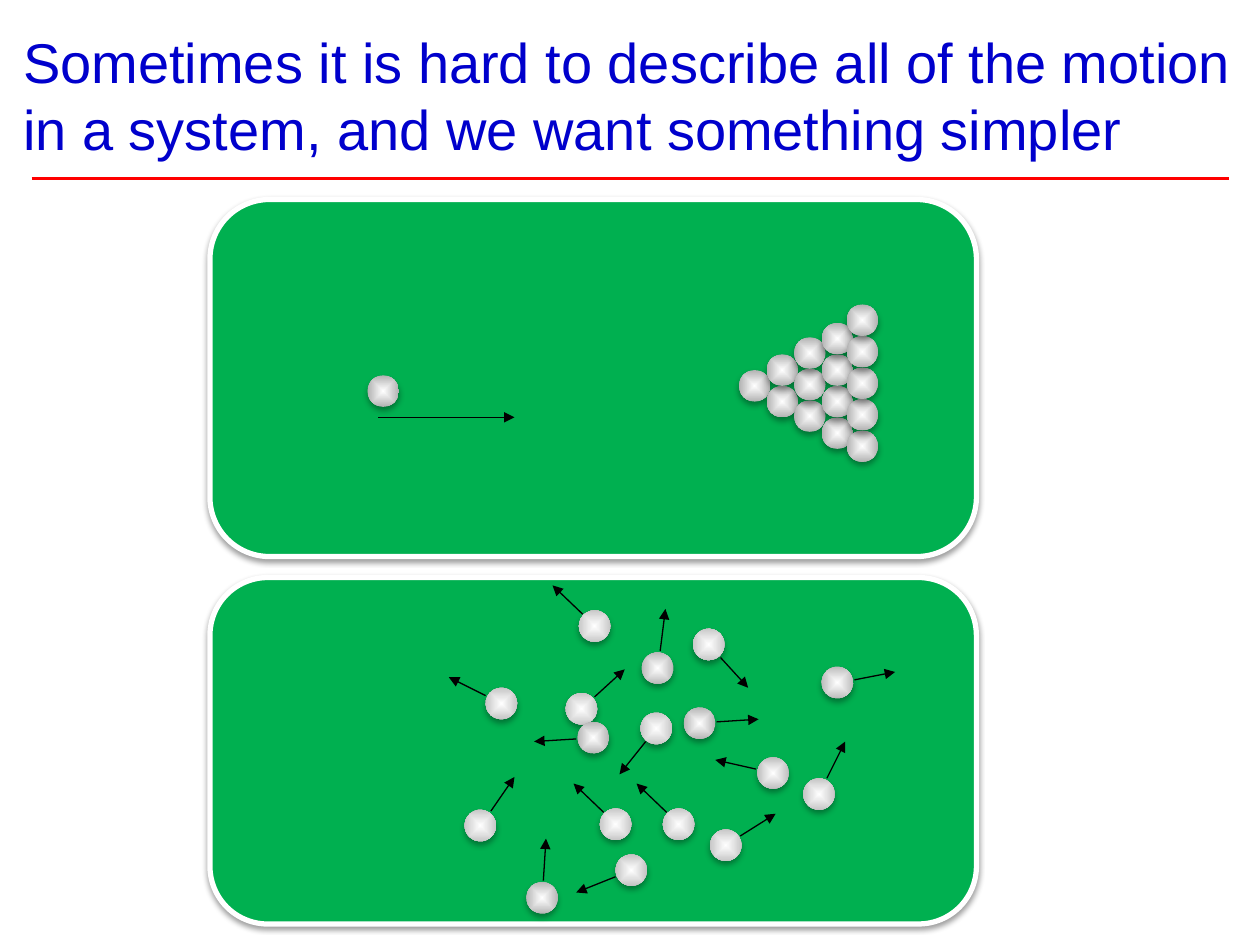
from dataclasses import dataclass
from math import cos, radians, sin
from typing import Any

from lxml.etree import SubElement
from pptx import Presentation
from pptx.dml.color import RGBColor
from pptx.enum.shapes import MSO_CONNECTOR, MSO_SHAPE
from pptx.enum.text import MSO_ANCHOR, MSO_AUTO_SIZE, PP_ALIGN
from pptx.oxml.ns import qn
from pptx.util import Emu, Pt

EMU_PER_PX = 9525
BALL = 24
ARROW_START, ARROW_END = 13, 45


@dataclass(frozen=True)
class Shadow:
    blur: float
    dist: float
    alpha: int


@dataclass(frozen=True)
class MovingBall:
    x: int
    y: int
    rot: float


PANEL_SHADOW = Shadow(3.15, 1.57, 38)
BALL_SHADOW = Shadow(3.5, 2.2, 32)
RACK_COLUMNS = [(563, 282), (584, 270), (605, 257), (626, 246), (645, 232)]
MOVING_BALLS = [
    MovingBall(354, 617, 215.6),
    MovingBall(370, 524, 116.8),
    MovingBall(457, 616, 133.9),
    MovingBall(577, 577, 102.6),
    MovingBall(528, 479, 317.4),
    MovingBall(541, 632, 237.6),
    MovingBall(469, 651, 68.2),
    MovingBall(521, 539, 266.5),
    MovingBall(431, 528, 227.8),
    MovingBall(488, 543, 39.2),
    MovingBall(401, 672, 184.3),
    MovingBall(612, 593, 206.7),
    MovingBall(626, 508, 260.1),
    MovingBall(505, 616, 133.9),
    MovingBall(440, 550, 86),
    MovingBall(441, 465, 133.9),
    MovingBall(489, 497, 187.3),
]


def px(n: int) -> Emu:
    return Emu(n * EMU_PER_PX)


def rgb(value: str) -> RGBColor:
    return RGBColor.from_string(value)


def set_attrs(obj: Any, fmt: dict[str, Any]) -> None:
    for name, value in fmt.items():
        setattr(obj, name, value)


def add_shadow(sp: Any, shadow: Shadow) -> None:
    sp.shadow.inherit = False
    effects = sp._element.spPr.find(qn("a:effectLst"))
    outer = SubElement(effects, qn("a:outerShdw"), blurRad=str(Pt(shadow.blur)),
                       dist=str(Pt(shadow.dist)), dir="5400000", rotWithShape="0")
    clr = SubElement(outer, qn("a:srgbClr"), val="000000")
    SubElement(clr, qn("a:alpha"), val=str(shadow.alpha * 1000))


def add_panel(shapes: Any, y: int, h: int) -> None:
    sp = shapes.add_shape(MSO_SHAPE.ROUNDED_RECTANGLE, px(160), px(y), px(584), px(h))
    sp.fill.solid()
    sp.fill.fore_color.rgb = rgb("00B050")
    sp.line.color.rgb = rgb("FFFFFF")
    sp.line.width = Pt(3)
    add_shadow(sp, PANEL_SHADOW)


def add_ball(shapes: Any, x: int, y: int, rot: float = 0) -> None:
    sp = shapes.add_shape(MSO_SHAPE.OVAL, px(x), px(y), px(BALL), px(BALL))
    sp.rotation = rot
    sp.line.fill.background()
    sp.fill.gradient()
    for stop, pos, color in zip(sp.fill.gradient_stops, (0, 1), ("FFFFFF", "B2B2B2")):
        stop.position = pos
        stop.color.rgb = rgb(color)
    grad = sp._element.spPr.find(qn("a:gradFill"))
    grad.remove(grad.find(qn("a:lin")))
    shade = SubElement(grad, qn("a:path"), {"path": "shape"})
    SubElement(shade, qn("a:fillToRect"), dict.fromkeys("ltrb", "50000"))
    add_shadow(sp, BALL_SHADOW)


def add_line(shapes: Any, start: tuple[int, int], end: tuple[int, int],
             color: str, width: float, arrow: bool) -> None:
    cxn = shapes.add_connector(MSO_CONNECTOR.STRAIGHT, *map(px, start + end))
    cxn.line.color.rgb = rgb(color)
    cxn.line.width = Pt(width)
    if arrow:
        SubElement(cxn.line._get_or_add_ln(), qn("a:tailEnd"), type="triangle")
    SubElement(cxn._element.spPr, qn("a:effectLst"))


def add_moving_ball(shapes: Any, ball: MovingBall) -> None:
    add_ball(shapes, ball.x, ball.y, ball.rot)
    angle = radians(ball.rot)
    start, end = (
        (round(ball.x + BALL / 2 - r * sin(angle)), round(ball.y + BALL / 2 + r * cos(angle)))
        for r in (ARROW_START, ARROW_END)
    )
    add_line(shapes, start, end, "000000", 0.75, True)


def format_title(title: Any, text: str) -> None:
    set_attrs(title, {"left": px(8), "top": px(0), "width": px(944), "height": px(128)})
    tf = title.text_frame
    set_attrs(tf, {"text": text, "word_wrap": True, "auto_size": MSO_AUTO_SIZE.NONE,
                   "vertical_anchor": MSO_ANCHOR.BOTTOM})
    p = tf.paragraphs[0]
    p.alignment = PP_ALIGN.LEFT
    r = p.runs[0]
    set_attrs(r.font, {"name": "Arial", "size": Pt(32)})
    r.font.color.rgb = rgb("0000CC")


def main() -> None:
    prs = Presentation()
    set_attrs(prs, {"slide_width": px(960), "slide_height": px(720)})
    s = prs.slides.add_slide(prs.slide_layouts[5])
    format_title(s.shapes.title, "Sometimes it is hard to describe all of the motion "
                                 "in a system, and we want something simpler")
    add_line(s.shapes, (24, 136), (936, 136), "FF0000", 1.5, False)

    add_panel(s.shapes, 152, 272)
    for col, (x, top) in enumerate(RACK_COLUMNS):
        for row in reversed(range(col + 1)):
            add_ball(s.shapes, x, top + row * BALL)
    add_ball(s.shapes, 280, 286)
    add_line(s.shapes, (288, 318), (392, 318), "000000", 0.75, True)

    scatter = s.shapes.add_group_shape().shapes
    add_panel(scatter, 440, 264)
    for ball in MOVING_BALLS:
        add_moving_ball(scatter, ball)

    prs.save("out.pptx")


if __name__ == "__main__":
    main()
